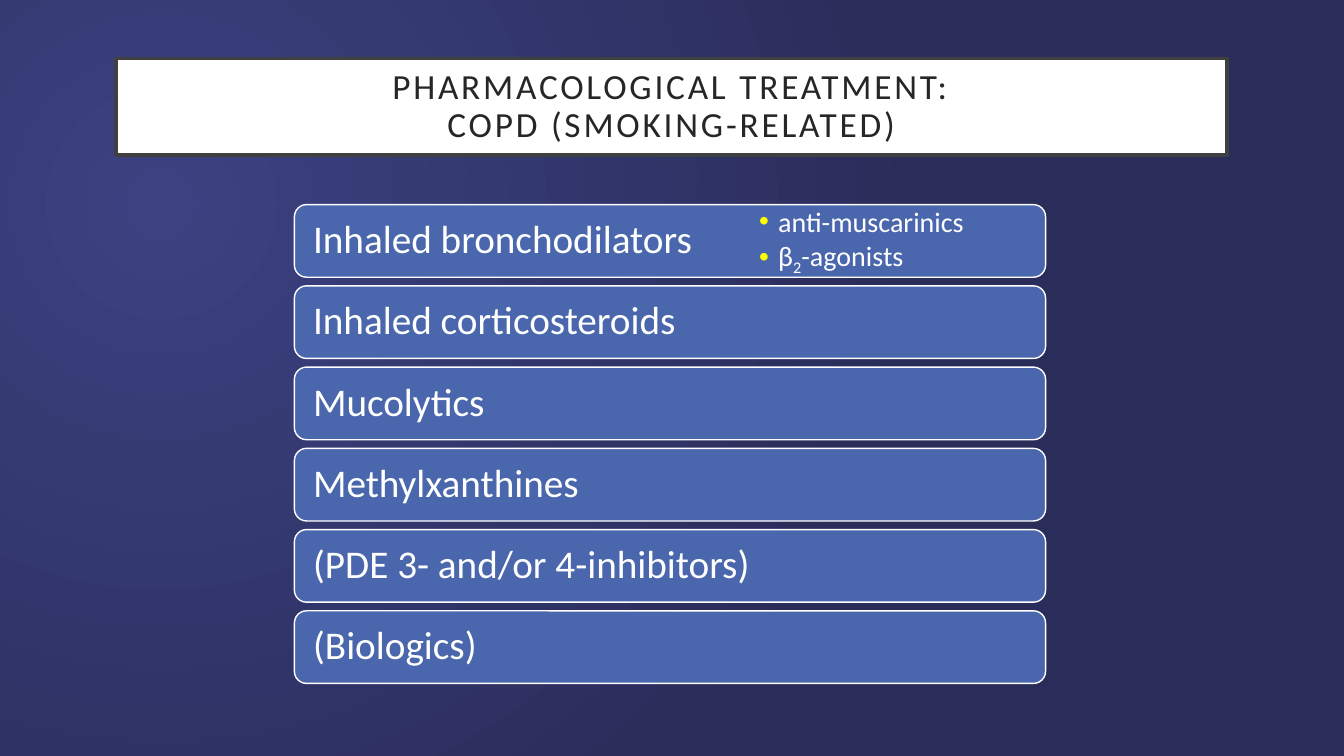
from dataclasses import dataclass

import pptx
import pptx.dml.color
import pptx.enum.dml
import pptx.enum.shapes
import pptx.enum.text
import pptx.oxml
import pptx.oxml.ns
import pptx.util

RGBColor = pptx.dml.color.RGBColor
Inches = pptx.util.Inches
Pt = pptx.util.Pt
qn = pptx.oxml.ns.qn
NS = pptx.oxml.ns.nsdecls("a")

WHITE = RGBColor(0xFF, 0xFF, 0xFF)
INK = RGBColor(0x26, 0x26, 0x26)
FRAME = RGBColor(0x40, 0x40, 0x40)
BLUE = RGBColor(0x4A, 0x66, 0xAC)
GLOW = RGBColor(0x3C, 0x41, 0x81)
NIGHT = RGBColor(0x2A, 0x2D, 0x59)

FONT = "Calibri"
ROW_LEFT, ROW_WIDTH, ROW_HEIGHT = 2.92, 7.45, 0.72
FIRST_TOP, LAST_TOP = 2.03, 6.06


@dataclass
class Treatment:
    name: str
    top: float


def add_text(p, text: str, *, size: float, color: RGBColor = WHITE,
             spacing: int = 0, baseline: int = 0) -> None:
    for i, line in enumerate(text.split("\n")):
        if i:
            p.add_line_break()
        r = p.add_run()
        r.text = line
        r.font.name = FONT
        r.font.size = Pt(size)
        r.font.color.rgb = color
        rPr = r.font._element
        if spacing:
            rPr.set("spc", str(spacing * 100))
        if baseline:
            rPr.set("baseline", str(baseline * 1000))


def set_margins(tf, side: float, edge: float) -> None:
    tf.margin_left = tf.margin_right = Inches(side)
    tf.margin_top = tf.margin_bottom = Inches(edge)
    tf.vertical_anchor = pptx.enum.text.MSO_ANCHOR.MIDDLE
    tf.word_wrap = True


def set_box(sp, fill: RGBColor, line: RGBColor, width: float) -> None:
    sp.fill.solid()
    sp.fill.fore_color.rgb = fill
    sp.line.color.rgb = line
    sp.line.width = Pt(width)


def set_background(s) -> None:
    fill = s.background.fill
    fill.gradient()
    for stop, color, position in zip(fill.gradient_stops, (GLOW, NIGHT), (0, 1)):
        stop.color.rgb = color
        stop.position = position
    grad = s.element.find(".//" + qn("a:gradFill"))
    grad.replace(grad.find(qn("a:lin")), pptx.oxml.parse_xml(
        f'<a:path {NS} path="circle">'
        '<a:fillToRect l="50000" t="55000" r="125000" b="100000"/></a:path>'))


def add_title(s, text: str) -> None:
    sp = s.shapes.title
    sp.left, sp.top = Inches(1.15), Inches(0.58)
    sp.width, sp.height = Inches(11.02), Inches(0.96)
    set_box(sp, WHITE, FRAME, 2.5)
    tf = sp.text_frame
    set_margins(tf, 0.2, 0.2)
    tf.auto_size = pptx.enum.text.MSO_AUTO_SIZE.NONE
    p = tf.paragraphs[0]
    p.alignment = pptx.enum.text.PP_ALIGN.CENTER
    p.line_spacing = 0.9
    add_text(p, text, size=25.2, color=INK, spacing=2)


def add_treatment(s, treatment: Treatment) -> None:
    sp = s.shapes.add_shape(
        pptx.enum.shapes.MSO_SHAPE.ROUNDED_RECTANGLE, Inches(ROW_LEFT),
        Inches(treatment.top), Inches(ROW_WIDTH), Inches(ROW_HEIGHT))
    sp.shadow.inherit = False
    set_box(sp, BLUE, WHITE, 1)
    set_margins(sp.text_frame, 0.15, 0.12)
    p = sp.text_frame.paragraphs[0]
    p.alignment = pptx.enum.text.PP_ALIGN.LEFT
    p.line_spacing = 0.9
    add_text(p, treatment.name, size=28)


def add_bullet(p) -> None:
    pPr = p._p.get_or_add_pPr()
    pPr.set("marL", str(Inches(0.19)))
    pPr.set("indent", str(Inches(-0.19)))
    for xml in (f'<a:buClr {NS}><a:srgbClr val="FFFF00"/></a:buClr>',
                f'<a:buFont {NS} typeface="Arial"/>',
                f'<a:buChar {NS} char="•"/>'):
        pPr.append(pptx.oxml.parse_xml(xml))


def add_bronchodilators(s) -> None:
    sp = s.shapes.add_textbox(Inches(7.43), Inches(1.98), Inches(2.75), Inches(0.77))
    tf = sp.text_frame
    tf.word_wrap = True
    tf.auto_size = pptx.enum.text.MSO_AUTO_SIZE.SHAPE_TO_FIT_TEXT
    p = tf.paragraphs[0]
    add_bullet(p)
    add_text(p, "anti-muscarinics", size=20)
    p = tf.add_paragraph()
    add_bullet(p)
    add_text(p, "β", size=20)
    add_text(p, "2", size=20, baseline=-25)
    add_text(p, "-agonists", size=20)


def main() -> None:
    prs = pptx.Presentation()
    prs.slide_width, prs.slide_height = Inches(13.33), Inches(7.5)
    s = prs.slides.add_slide(prs.slide_layouts.get_by_name("Title Only"))
    set_background(s)
    add_title(s, "PHARMACOLOGICAL TREATMENT:\nCOPD (SMOKING-RELATED)")
    names = ("Inhaled bronchodilators", "Inhaled corticosteroids", "Mucolytics",
             "Methylxanthines", "(PDE 3- and/or 4-inhibitors)", "(Biologics)")
    pitch = (LAST_TOP - FIRST_TOP) / (len(names) - 1)
    for i, name in enumerate(names):
        add_treatment(s, Treatment(name, FIRST_TOP + i * pitch))
    add_bronchodilators(s)
    prs.save("out.pptx")


if __name__ == "__main__":
    main()
